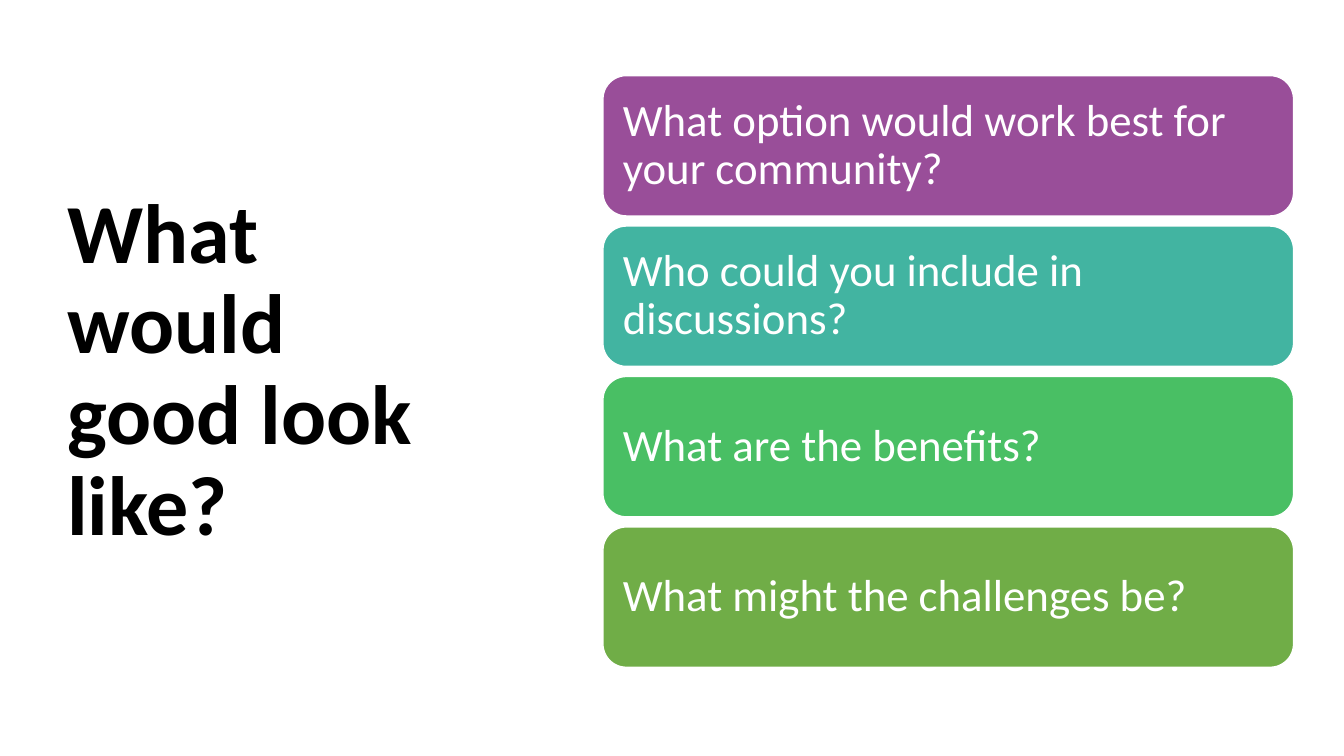
from pptx import Presentation
from pptx.dml.color import RGBColor
from pptx.enum.shapes import MSO_SHAPE
from pptx.enum.text import MSO_ANCHOR, PP_ALIGN
from pptx.util import Inches, Pt

QUESTIONS = [
    ("What option would work best for your community?", "994E99"),
    ("Who could you include in discussions?", "42B4A1"),
    ("What are the benefits?", "49BF64"),
    ("What might the challenges be?", "70AD47"),
]


def color(value):
    return RGBColor.from_string(value)


def write(shape, text, size, ink, bold=False):
    frame = shape.text_frame
    frame.word_wrap = True
    frame.vertical_anchor = MSO_ANCHOR.MIDDLE
    frame.text = text
    para = frame.paragraphs[0]
    para.alignment = PP_ALIGN.LEFT
    para.line_spacing = 0.9
    font = para.runs[0].font
    font.name = "Calibri"
    font.size = Pt(size)
    font.bold = bold
    font.color.rgb = color(ink)


def add_title(page, left, top, width, height):
    box = page.shapes.add_textbox(Inches(left), Inches(top), Inches(width), Inches(height))
    write(box, "What would good look like?", 60, "000000", bold=True)


def add_questions(page, left, top, width, height, gap=0.1):
    card_height = (height + gap) / len(QUESTIONS) - gap
    for index, (question, fill) in enumerate(QUESTIONS):
        card_top = top + index * (card_height + gap)
        card = page.shapes.add_shape(
            MSO_SHAPE.ROUNDED_RECTANGLE,
            Inches(left), Inches(card_top), Inches(width), Inches(card_height))
        card.shadow.inherit = False
        card.fill.solid()
        card.fill.fore_color.rgb = color(fill)
        card.line.color.rgb = color("FFFFFF")
        card.line.width = Pt(1)
        frame = card.text_frame
        frame.margin_left = frame.margin_right = Inches(0.13)
        frame.margin_top = frame.margin_bottom = Inches(0.13)
        write(card, question, 32, "FFFFFF")


def main():
    deck = Presentation()
    deck.slide_width = Inches(13.33)
    deck.slide_height = Inches(7.5)
    page = deck.slides.add_slide(deck.slide_layouts[6])
    add_title(page, 0.57, 0.68, 4.16, 6.02)
    add_questions(page, 5.98, 0.75, 6.85, 5.87)
    deck.save("out.pptx")


if __name__ == "__main__":
    main()
